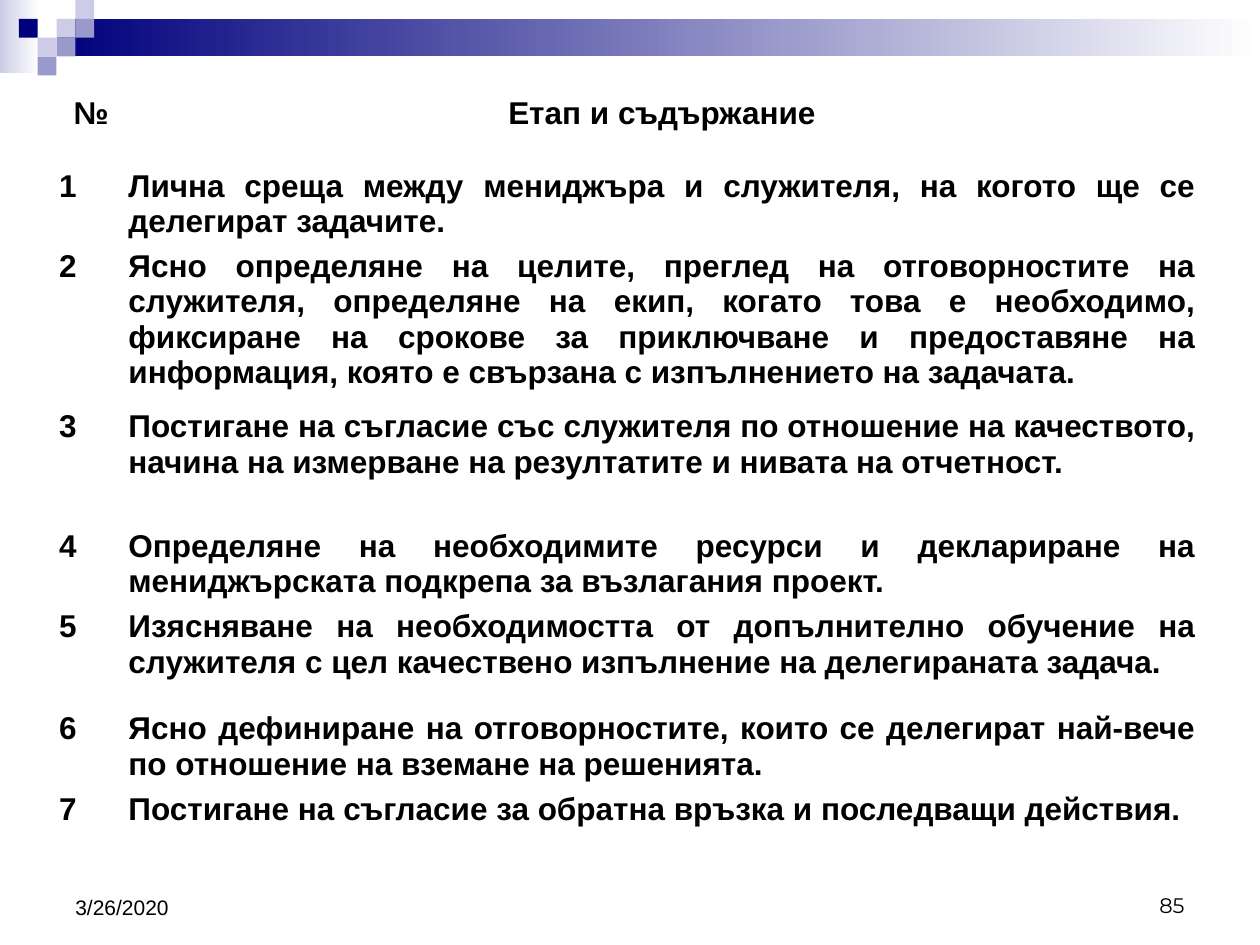
from lxml import etree
from pptx import Presentation
from pptx.dml.color import RGBColor
from pptx.enum.shapes import MSO_SHAPE
from pptx.enum.text import MSO_ANCHOR, PP_ALIGN
from pptx.oxml.ns import qn
from pptx.util import Cm, Pt

RECTANGLE = MSO_SHAPE.RECTANGLE
BOTTOM = MSO_ANCHOR.BOTTOM
LEFT, CENTER, RIGHT, JUSTIFY = (
    PP_ALIGN.LEFT, PP_ALIGN.CENTER, PP_ALIGN.RIGHT, PP_ALIGN.JUSTIFY)

BLANK_LAYOUT = 6
WHITE, BLACK = "FFFFFF", "000000"
NAVY, LAVENDER, PERIWINKLE = "00007D", "CCCCE6", "9999CC"

SQUARE = 0.38
# column, row and colour of each square in the corner mosaic
MOSAIC = [
    (3, 1, LAVENDER), (4, 0, LAVENDER), (4, 1, PERIWINKLE),
    (2, 2, LAVENDER), (1, 1, NAVY), (3, 2, PERIWINKLE), (2, 3, PERIWINKLE),
]

HEADER = ("№", "Етап и съдържание")
STAGES = [
    "Лична среща между мениджъра и служителя, на когото ще се делегират задачите.",
    "Ясно определяне на целите, преглед на отговорностите на служителя, "
    "определяне на екип, когато това е необходимо, фиксиране на срокове за "
    "приключване и предоставяне на информация, която е свързана с "
    "изпълнението на задачата.",
    "Постигане на съгласие със служителя по отношение на качеството, начина на "
    "измерване на резултатите и нивата на отчетност.",
    "Определяне на необходимите ресурси и деклариране на мениджърската подкрепа "
    "за възлагания проект.",
    "Изясняване на необходимостта от допълнително обучение на служителя с цел "
    "качествено изпълнение на делегираната задача.",
    "Ясно дефиниране на отговорностите, които се делегират най-вече по отношение "
    "на вземане на решенията.",
    "Постигане на съгласие за обратна връзка и последващи действия.",
]
COLUMN_WIDTHS = [1.4, 21.61]
ROW_HEIGHTS = [1.47, 1.62, 3.23, 2.41, 1.62, 2.06, 1.62, 1.62]


def color(hex_value):
    return RGBColor.from_string(hex_value)


def write_text(frame, text, size=12, font="Arial", bold=False, align=LEFT,
               spacing=0, indent=0):
    paragraph = frame.paragraphs[0]
    paragraph.alignment = align
    paragraph.space_before = paragraph.space_after = Pt(spacing)
    properties = paragraph._p.get_or_add_pPr()
    properties.set("marL", str(Cm(indent)))
    properties.set("indent", "0")
    run = paragraph.add_run()
    run.text = text
    run.font.size = Pt(size)
    run.font.name = font
    run.font.bold = bold
    run.font.color.rgb = color(BLACK)


def add_rectangle(slide, left, top, width, height, fill, fade_to=None):
    """Add a borderless rectangle, fading to the right if fade_to is given."""
    rectangle = slide.shapes.add_shape(
        RECTANGLE, Cm(left), Cm(top), Cm(width), Cm(height))
    rectangle.shadow.inherit = False
    rectangle.line.fill.background()
    if fade_to:
        rectangle.fill.gradient()
        rectangle.fill.gradient_angle = 0
        for stop, shade in zip(rectangle.fill.gradient_stops, (fill, fade_to)):
            stop.color.rgb = color(shade)
    else:
        rectangle.fill.solid()
        rectangle.fill.fore_color.rgb = color(fill)


def add_footer(slide, text, left, height, **text_format):
    footer = slide.shapes.add_textbox(
        Cm(left), Cm(17.35), Cm(5.92), Cm(height))
    frame = footer.text_frame
    frame.word_wrap = True
    frame.vertical_anchor = BOTTOM
    write_text(frame, text, **text_format)


def set_borders(cell, **widths):
    """Draw white borders; widths in points are keyed by side: L, R, T, B."""
    properties = cell._tc.get_or_add_tcPr()
    for side, width in widths.items():
        border = etree.SubElement(
            properties, qn(f"a:ln{side}"), w=str(Pt(width)))
        fill = etree.SubElement(border, qn("a:solidFill"))
        etree.SubElement(fill, qn("a:srgbClr"), val=WHITE)


def add_stage_table(slide):
    rows = [HEADER] + [(str(n), stage) for n, stage in enumerate(STAGES, 1)]
    table = slide.shapes.add_table(
        len(rows), len(HEADER), Cm(1.09), Cm(1.93),
        Cm(sum(COLUMN_WIDTHS)), Cm(sum(ROW_HEIGHTS))).table
    for column, width in zip(table.columns, COLUMN_WIDTHS):
        column.width = Cm(width)
    for row, height in zip(table.rows, ROW_HEIGHTS):
        row.height = Cm(height)
    last = len(rows) - 1
    for r, row in enumerate(rows):
        for c, text in enumerate(row):
            cell = table.cell(r, c)
            cell.margin_left = cell.margin_right = 0
            cell.margin_top = cell.margin_bottom = 0
            set_borders(cell, L=1, R=1, T=3 if r in (1, last) else 1,
                        B=3 if r in (0, last - 1) else 1)
            cell.fill.solid()
            cell.fill.fore_color.rgb = color(WHITE)
            write_text(cell.text_frame, text, size=18, bold=True, spacing=2,
                       indent=0.1, align=JUSTIFY if r else CENTER)


def main():
    presentation = Presentation()
    presentation.slide_width = Cm(25.4)
    presentation.slide_height = Cm(19.05)
    slide = presentation.slides.add_slide(
        presentation.slide_layouts[BLANK_LAYOUT])

    add_rectangle(slide, 0, 0, 0.79, 1.47, LAVENDER, fade_to=WHITE)
    add_rectangle(slide, 3 * SQUARE, SQUARE, 24.26, 2 * SQUARE, NAVY,
                  fade_to=WHITE)
    for column, row, fill in MOSAIC:
        add_rectangle(slide, column * SQUARE, row * SQUARE, SQUARE, SQUARE, fill)

    add_footer(slide, "85", 18.21, 1.27, font="Montserrat", align=RIGHT)
    add_footer(slide, "3/26/2020", 1.27, 1.32)
    add_stage_table(slide)
    presentation.save("out.pptx")


if __name__ == "__main__":
    main()
